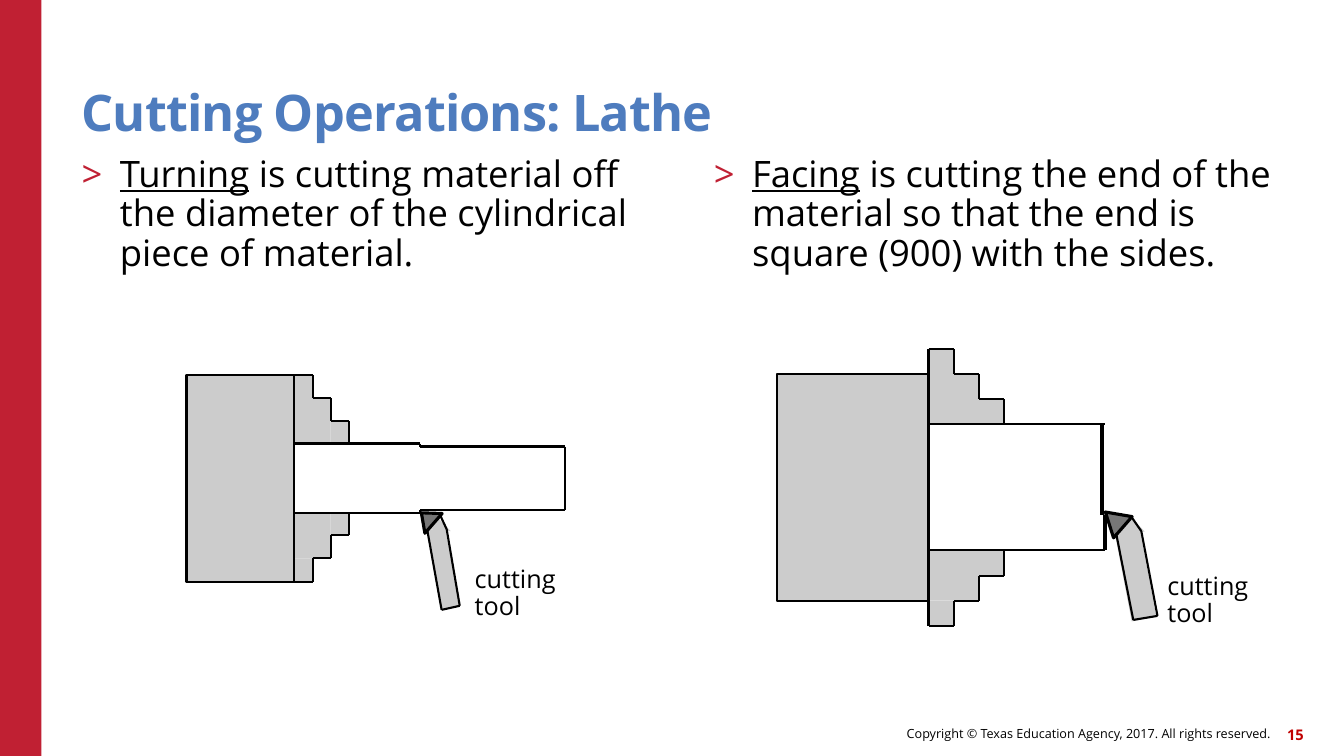
from lxml import etree
from pptx import Presentation
from pptx import util as u
from pptx.dml.color import RGBColor
from pptx.enum import shapes, text
from pptx.oxml import ns

PX = 9144  # EMU in one px, 100 px to the inch
FONT = "Open Sans"
BLACK = RGBColor(0x00, 0x00, 0x00)
WHITE = RGBColor(0xFF, 0xFF, 0xFF)
RED = RGBColor(0xC0, 0x20, 0x33)
DARK_RED = RGBColor(0xC0, 0x00, 0x00)
BLUE = RGBColor(0x4E, 0x7C, 0xBE)
STEEL = RGBColor(0xCC, 0xCC, 0xCC)
TIP_GRAY = RGBColor(0x77, 0x77, 0x77)
THIN, THICK = 1.5, 2.25
RECT = shapes.MSO_SHAPE.RECTANGLE
TRIANGLE = shapes.MSO_SHAPE.ISOSCELES_TRIANGLE
CORNER = shapes.MSO_SHAPE.RIGHT_TRIANGLE
TOP, MIDDLE, BOTTOM = (text.MSO_ANCHOR.TOP, text.MSO_ANCHOR.MIDDLE,
                       text.MSO_ANCHOR.BOTTOM)
RIGHT = text.PP_ALIGN.RIGHT


def emu(*lengths):
    return [u.Emu(length * PX) for length in lengths]


class LatheSlide:
    def __init__(self, page):
        self.page = page
        self.canvas = page.shapes

    def start_group(self):
        self.canvas = self.page.shapes.add_group_shape().shapes

    def end_group(self):
        self.canvas = self.page.shapes

    def shape(self, at, fill, kind=RECT, line=None, turn=0):
        shape = self.canvas.add_shape(kind, *emu(*at))
        shape.shadow.inherit = False
        shape.fill.solid()
        shape.fill.fore_color.rgb = fill
        shape.rotation = turn
        if line:
            shape.line.color.rgb = BLACK
            shape.line.width = u.Pt(line)
        else:
            shape.line.fill.background()

    def chain(self, points, width=THIN):
        """Join successive points with straight connectors."""
        for start, end in zip(points, points[1:]):
            line = self.canvas.add_connector(
                shapes.MSO_CONNECTOR.STRAIGHT, *emu(*start, *end))
            line.line.color.rgb = BLACK
            line.line.width = u.Pt(width)
            etree.SubElement(line._element.spPr, ns.qn("a:effectLst"))

    def text_box(self, at, anchor=TOP, inset=(0, 0)):
        box = self.canvas.add_textbox(*emu(*at))
        frame = box.text_frame
        frame.word_wrap = True
        frame.vertical_anchor = anchor
        frame.margin_left, frame.margin_top = emu(*inset)
        frame.margin_right, frame.margin_bottom = emu(*inset)
        return frame.paragraphs[0]

    def run(self, para, words, size, color=BLACK, bold=False, underline=False):
        span = para.add_run()
        span.text = words
        font = span.font
        font.name, font.size, font.bold = FONT, u.Pt(size), bold
        font.underline = underline
        font.color.rgb = color
        return span

    def title(self, at, words):
        para = self.text_box(at, BOTTOM)
        para.line_spacing = 0.9
        span = self.run(para, words, 36, BLUE, bold=True)
        span._r.get_or_add_rPr().set("spc", "-60")

    def footer(self, at, words, size, color=BLACK, bold=False):
        para = self.text_box(at, MIDDLE)
        para.alignment = RIGHT
        self.run(para, words, size, color, bold)

    def definition(self, at, term, meaning):
        """Bulleted sentence that opens with an underlined term."""
        para = self.text_box(at)
        props = para._p.get_or_add_pPr()
        props.set("marL", str(38 * PX))
        props.set("indent", str(-38 * PX))
        color = etree.SubElement(props, ns.qn("a:buClr"))
        etree.SubElement(color, ns.qn("a:srgbClr"), val=str(RED))
        etree.SubElement(props, ns.qn("a:buFont"), typeface=FONT)
        etree.SubElement(props, ns.qn("a:buChar"), char=">")
        para.line_spacing = 0.9
        self.run(para, term, 26, underline=True)
        self.run(para, meaning, 26)

    def label(self, at, *lines):
        para = self.text_box(at, inset=(10, 5))
        para.line_spacing = 0.9
        for number, words in enumerate(lines):
            if number:
                para.add_line_break()
            self.run(para, words, 18)

    def jaw(self, x, edge, dx, dy, side):
        """Stepped chuck jaw beside the stock edge; side is -1 above, 1 below."""
        for column, row, span in ((0, 2, 1), (2, 0, 1), (0, 0, 2)):
            near, far = edge + side * row * dy, edge + side * (row + span) * dy
            self.shape((x + column * dx, min(near, far), span * dx, span * dy),
                       STEEL)
        stairs = [(x, edge + side * 3 * dy)]
        for step in (1, 2, 3):
            right = x + step * dx
            stairs += [(right, edge + side * (4 - step) * dy),
                       (right, edge + side * (3 - step) * dy)]
        self.chain(stairs)

    def cutting_tool(self, corner, shank, tip, outline):
        self.shape(corner, STEEL, CORNER, turn=136)
        self.shape(shank, STEEL, turn=349.2)
        self.shape(tip, TIP_GRAY, TRIANGLE, THICK, turn=311.1)
        self.chain(outline)


def draw_turning(slide):
    slide.start_group()
    slide.shape((417, 440, 143, 68), WHITE)
    slide.shape((292, 440, 125, 68), WHITE)
    slide.jaw(292, 441, 18, 23, -1)
    slide.jaw(292, 508, 18, 23, 1)
    slide.shape((185, 372, 107, 205), STEEL, line=THIN)
    slide.chain([(292, 440), (417, 440), (417, 443), (560, 443),
                 (560, 506), (417, 506), (417, 509), (292, 509)])
    slide.cutting_tool(
        corner=(427, 517, 16, 18), shank=(431, 524, 18, 80),
        tip=(411, 506, 26, 16),
        outline=[(437, 512), (443, 525), (456, 601), (438, 605), (424, 527)])
    slide.end_group()
    slide.label((461, 557, 149, 70), "cutting", "tool")


def draw_facing(slide):
    slide.start_group()
    slide.shape((921, 421, 175, 125), WHITE)
    slide.jaw(921, 421, 25, 25, -1)
    slide.jaw(921, 546, 25, 25, 1)
    slide.shape((771, 371, 150, 225), STEEL, line=THIN)
    for y in (421, 546):
        slide.chain([(921, y), (1096, y)])
    for x, top, bottom in ((921, 346, 371), (921, 596, 621),
                           (1096, 511, 546), (1093, 421, 511)):
        slide.chain([(x, top), (x, bottom)], THICK)
    slide.cutting_tool(
        corner=(1109, 519, 23, 19), shank=(1114, 527, 25, 88),
        tip=(1091, 504, 28, 23),
        outline=[(1123, 514), (1132, 527), (1148, 611), (1124, 615),
                 (1107, 529)])
    slide.end_group()
    slide.label((1148, 564, 149, 70), "cutting", "tool")


def main():
    deck = Presentation()
    deck.slide_width, deck.slide_height = emu(1333, 750)
    slide = LatheSlide(deck.slides.add_slide(deck.slide_layouts[6]))
    slide.shape((0, 0, 41, 750), RED)
    slide.footer((614, 712, 646, 32),
                 "Copyright © Texas Education Agency, 2017. All rights reserved.",
                 9)
    slide.footer((1251, 713, 42, 32), "15", 10.5, DARK_RED, bold=True)
    slide.title((81, 45, 1100, 96), "Cutting Operations: Lathe")
    slide.definition((81, 155, 583, 151), "Turning",
                     " is cutting material off the diameter of the cylindrical "
                     "piece of material.")
    slide.definition((708, 155, 583, 157), "Facing",
                     " is cutting the end of the material so that the end is "
                     "square (900) with the sides.")
    draw_facing(slide)
    draw_turning(slide)
    deck.save("out.pptx")


if __name__ == "__main__":
    main()
